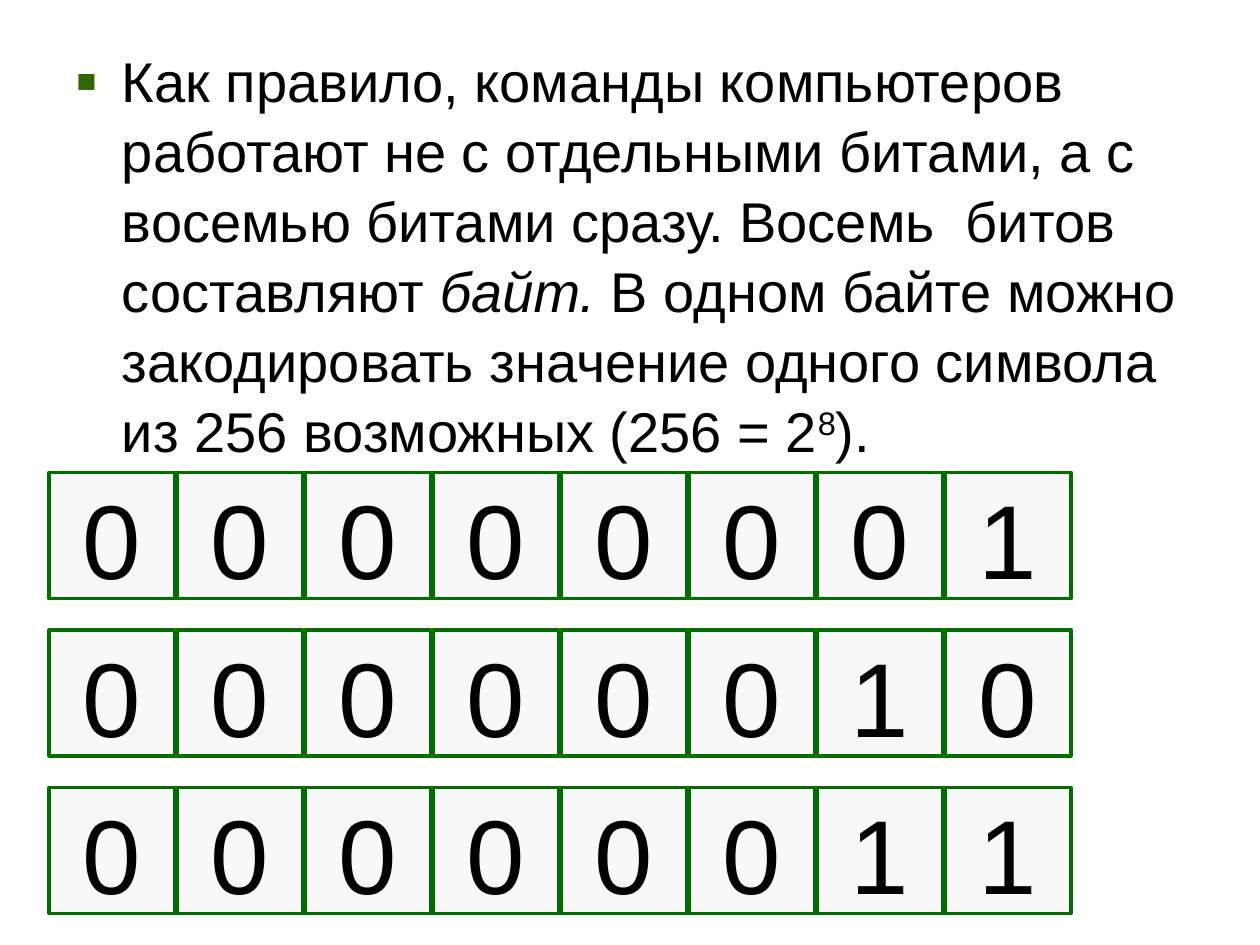
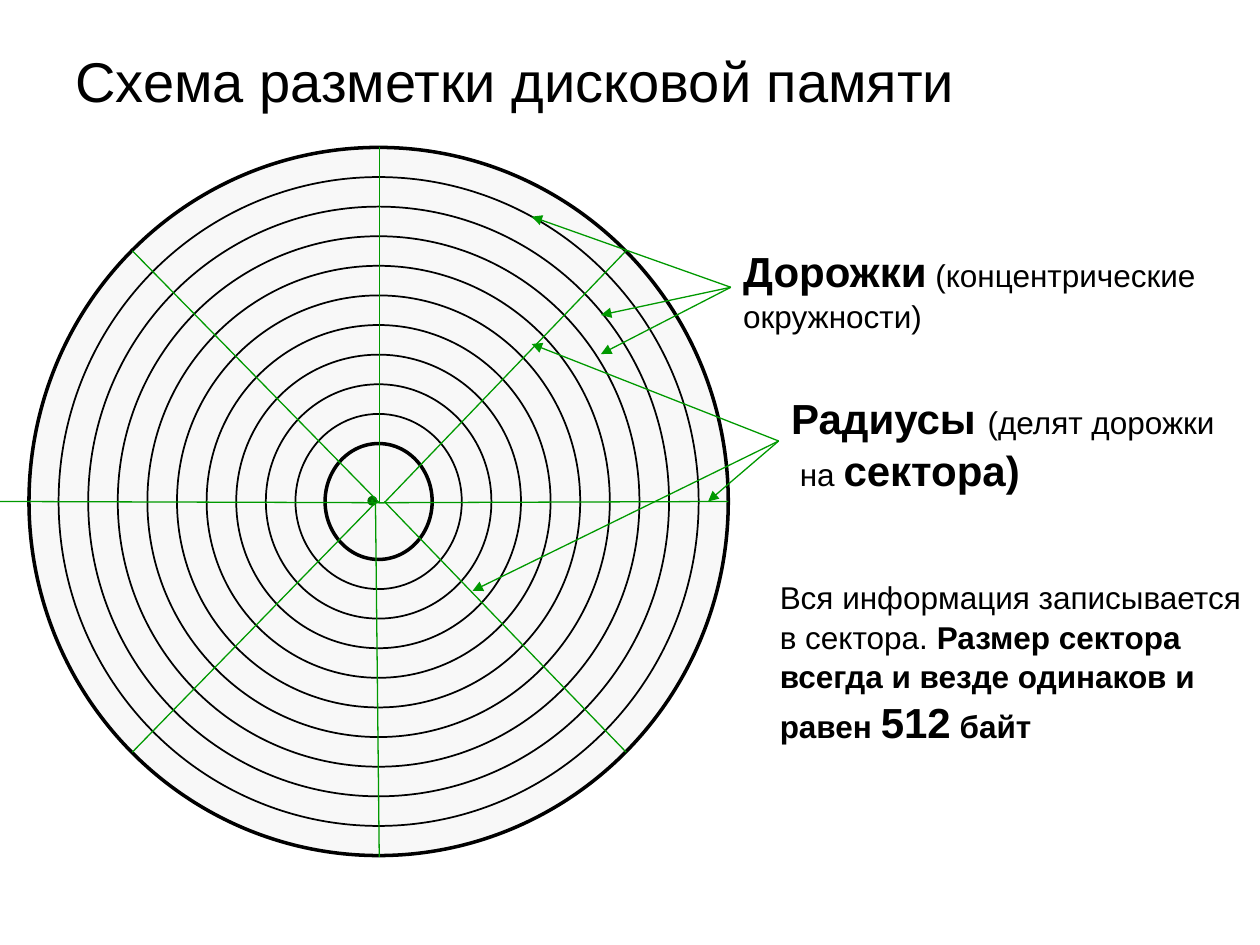
from lxml import etree
from pptx import Presentation
from pptx.dml.color import RGBColor
from pptx.enum.shapes import MSO_CONNECTOR, MSO_SHAPE
from pptx.enum.text import MSO_ANCHOR, PP_ALIGN
from pptx.oxml.ns import qn
from pptx.util import Inches, Pt

RECTANGLE, ELLIPSE = MSO_SHAPE.RECTANGLE, MSO_SHAPE.OVAL
STRAIGHT = MSO_CONNECTOR.STRAIGHT
MIDDLE, CENTER = MSO_ANCHOR.MIDDLE, PP_ALIGN.CENTER
LEFT_SIDE = 1

COLORS = {"text": "000000", "panel": "F8F8F8", "border": "006F00",
          "spoke": "009900", "bullet": "336600"}
FONT = "Arial"
LINE_SPACING = 1.04
HEADING_SIZE, BIT_SIZE, KEY_SIZE, NOTE_SIZE = 32, 60, 24, 18
HEADING_INDENT = 0.37

# Each run: text, size, and an optional style
BYTE_TEXT = [[
    ("Как правило, команды компьютеров работают не с отдельными битами, "
     "а с восемью битами сразу. Восемь  битов составляют ", HEADING_SIZE),
    ("байт. ", HEADING_SIZE, "italic"),
    ("В одном байте можно закодировать значение одного символа "
     "из 256 возможных (256 = 2", HEADING_SIZE),
    ("8", HEADING_SIZE, "superscript"),
    (").", HEADING_SIZE),
]]
BYTES = ["00000001", "00000010", "00000011"]
BIT_LEFT, BIT_TOP, BIT_SIDE = 0.39, 3.75, 1
BIT_PITCH, BYTE_PITCH = (7.5 - 0.39) / 7, 1.25

DISK_TITLE = [[("Схема разметки дисковой памяти", HEADING_SIZE)]]
DISK_BOX = (0.23, 1.17, 5.55, 5.62)
RING_COUNT, RING_STEP = 11, 0.235
HUB_BOX = (2.93, 3.95, 0.05, 0.05)
SPOKES = [
    ((3.05, 3.98), (4.97, 5.97)),
    ((3.01, 3.99), (5.78, 3.98)),
    ((2.98, 3.99), (3.01, 6.8)),
    ((3.05, 3.99), (0, 3.98)),
    ((2.98, 3.99), (1.05, 5.97)),
    ((3.01, 3.99), (3.01, 1.17)),
    ((3.01, 3.99), (1.05, 1.99)),
    ((3.05, 3.99), (4.97, 1.99)),
]
CALLOUTS = [
    {"box": (5.8, 1.88, 3.79, 0.8),
     "text": [[("Дорожки", KEY_SIZE, "bold"), (" (концентрические", NOTE_SIZE)],
              [("окружности)", NOTE_SIZE)]],
     "targets": [(4.22, 1.72), (4.77, 2.5), (4.77, 2.81)]},
    {"box": (6.18, 3.05, 3.58, 0.9),
     "text": [[("Радиусы ", KEY_SIZE, "bold"), ("(делят дорожки", NOTE_SIZE)],
              [(" на ", NOTE_SIZE), ("сектора)", KEY_SIZE, "bold")]],
     "targets": [(4.22, 2.73), (5.62, 3.98), (3.75, 4.69)]},
]
SECTOR_BOX = (6.09, 4.53, 3.91, 1.4)
SECTOR_TEXT = [
    [("Вся информация записывается", NOTE_SIZE)],
    [("в сектора. ", NOTE_SIZE),
     ("Размер сектора всегда и везде одинаков и равен ", NOTE_SIZE, "bold"),
     ("512", KEY_SIZE, "bold"),
     (" байт", NOTE_SIZE, "bold")],
]


def color(name):
    return RGBColor.from_string(COLORS[name])


def inches(values):
    return [Inches(value) for value in values]


def write(text_frame, paragraphs):
    for index, runs in enumerate(paragraphs):
        paragraph = text_frame.paragraphs[0] if index == 0 else text_frame.add_paragraph()
        paragraph.line_spacing = LINE_SPACING
        for text, size, *styles in runs:
            run = paragraph.add_run()
            run.text = text
            run.font.name = FONT
            run.font.size = Pt(size)
            run.font.color.rgb = color("text")
            run.font.bold = "bold" in styles
            run.font.italic = "italic" in styles
            if "superscript" in styles:
                run.font._element.set("baseline", "30000")


def add_text(slide, box, paragraphs, wrap=True):
    shape = slide.shapes.add_textbox(*inches(box))
    shape.text_frame.word_wrap = wrap
    write(shape.text_frame, paragraphs)
    return shape


def add_heading(slide, height, paragraphs, bullet=False):
    """Large text at the top of a slide, with a hanging indent."""
    shape = add_text(slide, (0.5, 0.3, 9, height), paragraphs)
    properties = shape.text_frame.paragraphs[0]._p.get_or_add_pPr()
    properties.set("marL", str(Inches(HEADING_INDENT)))
    properties.set("indent", str(-Inches(HEADING_INDENT)))
    if bullet:
        bullet_color = etree.SubElement(properties, qn("a:buClr"))
        etree.SubElement(bullet_color, qn("a:srgbClr"), val=COLORS["bullet"])
        etree.SubElement(properties, qn("a:buSzPct"), val="115000")
        etree.SubElement(properties, qn("a:buFont"), typeface=FONT)
        etree.SubElement(properties, qn("a:buChar"), char="▪")


def add_shape(slide, kind, box, fill, line, line_width):
    shape = slide.shapes.add_shape(kind, *inches(box))
    shape.shadow.inherit = False
    if fill:
        shape.fill.solid()
        shape.fill.fore_color.rgb = color(fill)
    else:
        shape.fill.background()
    shape.line.color.rgb = color(line)
    shape.line.width = Pt(line_width)
    return shape


def add_line(slide, start, end, arrow=False):
    connector = slide.shapes.add_connector(STRAIGHT, *inches(start + end))
    connector.line.color.rgb = color("spoke")
    connector.line.width = Pt(0.75)
    if arrow:
        etree.SubElement(connector.line._get_or_add_ln(), qn("a:tailEnd"), type="triangle")
    etree.SubElement(connector._element.spPr, qn("a:effectLst"))
    return connector


def build_byte_slide(slide):
    add_heading(slide, 3.3, BYTE_TEXT, bullet=True)
    for row, bits in enumerate(BYTES):
        for column, bit in enumerate(bits):
            box = (BIT_LEFT + column * BIT_PITCH, BIT_TOP + row * BYTE_PITCH,
                   BIT_SIDE, BIT_SIDE)
            cell = add_shape(slide, RECTANGLE, box, "panel", "border", 2)
            cell.text_frame.vertical_anchor = MIDDLE
            write(cell.text_frame, [[(bit, BIT_SIZE)]])
            cell.text_frame.paragraphs[0].alignment = CENTER


def build_disk_slide(slide):
    add_heading(slide, 0.72, DISK_TITLE)
    left, top, width, height = DISK_BOX
    for ring in range(RING_COUNT):
        inset = ring * RING_STEP
        box = (left + inset, top + inset, width - 2 * inset, height - 2 * inset)
        innermost = ring == RING_COUNT - 1
        add_shape(slide, ELLIPSE, box, None if innermost else "panel", "text",
                  2 if ring == 0 or innermost else 1)
    add_shape(slide, ELLIPSE, HUB_BOX, "spoke", "border", 2)
    for start, end in SPOKES:
        add_line(slide, start, end)
    for callout in CALLOUTS:
        label = add_text(slide, callout["box"], callout["text"], wrap=False)
        label_left, label_top, _, label_height = callout["box"]
        for target in callout["targets"]:
            arrow = add_line(slide, (label_left, label_top + label_height / 2),
                             target, arrow=True)
            arrow.begin_connect(label, LEFT_SIDE)
    add_text(slide, SECTOR_BOX, SECTOR_TEXT)


def main():
    presentation = Presentation()
    presentation.slide_width, presentation.slide_height = Inches(10), Inches(7.5)
    blank = presentation.slide_layouts[6]
    for build in (build_byte_slide, build_disk_slide):
        build(presentation.slides.add_slide(blank))
    presentation.save("out.pptx")


if __name__ == "__main__":
    main()
